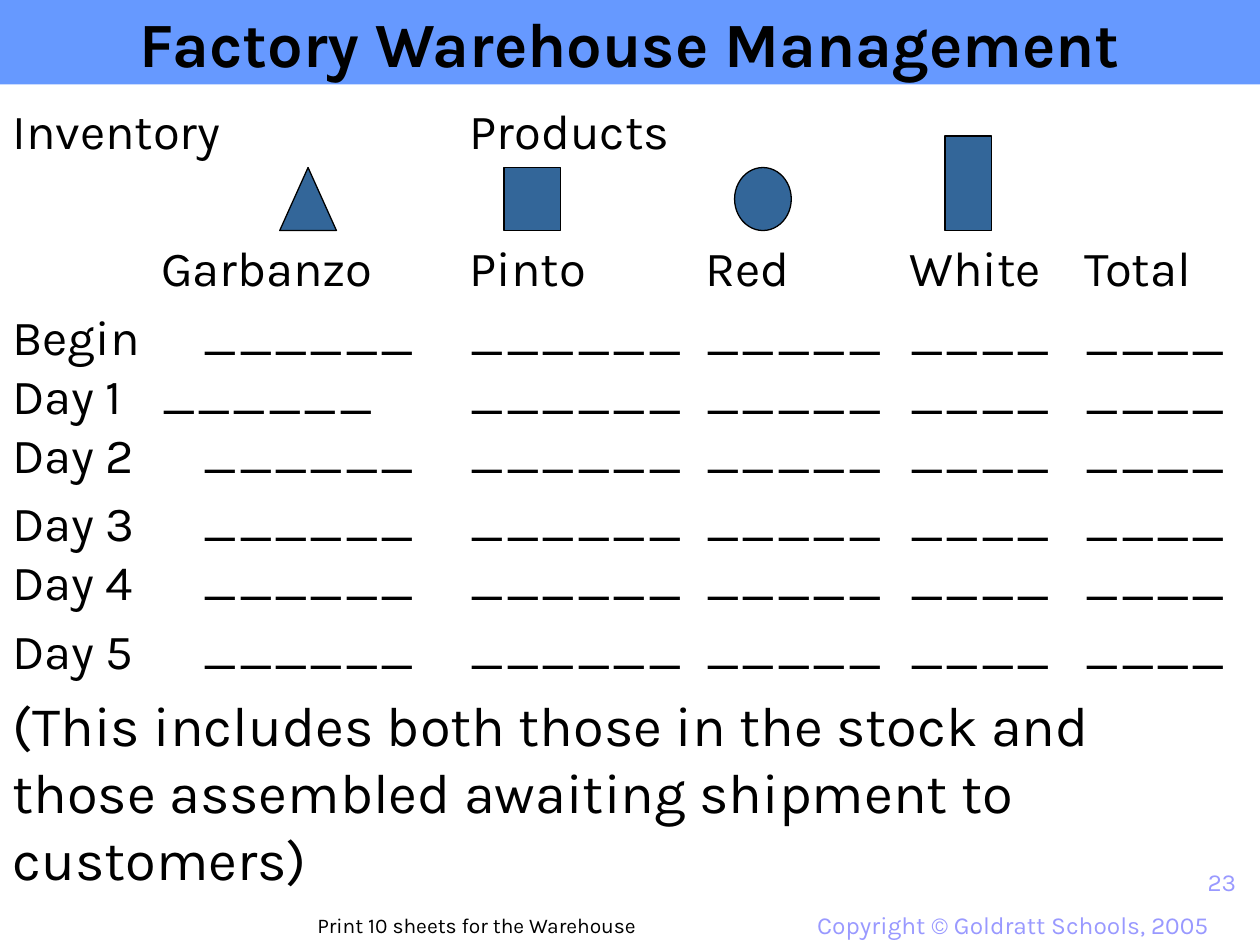
"""Build the Factory Warehouse Management inventory sheet slide."""
from lxml import etree
from pptx import Presentation
from pptx.dml.color import RGBColor
from pptx.enum.shapes import MSO_SHAPE
from pptx.enum.text import MSO_ANCHOR, MSO_AUTO_SIZE, PP_ALIGN
from pptx.oxml.ns import qn
from pptx.util import Inches, Pt

RECT, OVAL, TRIANGLE = MSO_SHAPE.RECTANGLE, MSO_SHAPE.OVAL, MSO_SHAPE.ISOSCELES_TRIANGLE
LEFT, CENTER, RIGHT = PP_ALIGN.LEFT, PP_ALIGN.CENTER, PP_ALIGN.RIGHT
FONT, BLACK, LILAC, BAND, STEEL = "Karla", "000000", "9999FF", "6699FF", "336699"

TITLE = "Factory Warehouse Management"
HEADS = ["Garbanzo", "Pinto", "Red", "White", "Total"]
BLANKS = ["_" * n for n in (6, 6, 5, 4, 4)]
COLUMNS = [3.63, 5.5, 7.12, 8.51]
NEAR, FAR = 1.18, 1.51
GAP = 5.6
DAYS = [
    ("Begin", FAR, GAP), ("Day 1", NEAR, 0), ("Day 2", FAR, 0),
    ("Day 3", FAR, GAP), ("Day 4", FAR, 0), ("Day 5", FAR, GAP),
]
NOTE = "(This includes both those in the stock and those assembled awaiting shipment to customers)"
LINES = [
    ("Inventory\tProducts", COLUMNS[:1], 0, 28),
    ("\t".join(["", *HEADS]), [NEAR, *COLUMNS], 44.8, 28),
    *[("\t".join([day, *BLANKS]), [first, *COLUMNS], before, 28) for day, first, before in DAYS],
    (NOTE, [], 6.4, 32),
]
PRODUCTS = [
    (RECT, 4, 1.33, 0.45, 0.5),
    (OVAL, 5.83, 1.33, 0.45, 0.5),
    (TRIANGLE, 2.22, 1.33, 0.45, 0.5),
    (RECT, 7.5, 1.08, 0.37, 0.75),
]
FOOTERS = [
    ("Copyright © Goldratt Schools, 2005", (6.08, 7.17, 3.92, 0.33), 14, LILAC, CENTER),
    ("23", (7.83, 6.83, 2.08, 0.5), 14, LILAC, RIGHT),
    ("Print 10 sheets for the Warehouse", (2.42, 7.19, 2.83, 0.3), 12, BLACK, LEFT),
]


def rgb(value):
    return RGBColor.from_string(value)


def write(p, text, size=28, color=BLACK, bold=False, align=LEFT, before=0, tabs=()):
    p.alignment = align
    p.space_before = Pt(before)
    if tabs:
        tab_list = etree.SubElement(p._p.get_or_add_pPr(), qn("a:tabLst"))
        for pos in tabs:
            etree.SubElement(tab_list, qn("a:tab"), pos=str(Inches(pos)), algn="l")
    r = p.add_run()
    r.text = text
    r.font.name, r.font.size, r.font.bold = FONT, Pt(size), bold
    r.font.color.rgb = rgb(color)


def add_box(s, *box):
    tf = s.shapes.add_textbox(*map(Inches, box)).text_frame
    tf.word_wrap = True
    return tf


def add_title(s):
    sp = s.shapes.title
    sp.left, sp.top, sp.width, sp.height = map(Inches, (0, 0, 10, 0.67))
    sp.fill.solid()
    sp.fill.fore_color.rgb = rgb(BAND)
    tf = sp.text_frame
    tf.auto_size = MSO_AUTO_SIZE.NONE
    tf.vertical_anchor = MSO_ANCHOR.MIDDLE
    write(tf.paragraphs[0], TITLE, size=36, bold=True, align=CENTER)


def add_product(s, kind, *box):
    sp = s.shapes.add_shape(kind, *map(Inches, box))
    sp.shadow.inherit = False
    sp.fill.solid()
    sp.fill.fore_color.rgb = rgb(STEEL)
    sp.line.color.rgb = rgb(BLACK)
    sp.line.width = Pt(0.75)


def main():
    prs = Presentation()
    prs.slide_width, prs.slide_height = Inches(10), Inches(7.5)
    s = prs.slides.add_slide(prs.slide_layouts[5])
    add_title(s)
    tf = add_box(s, 0, 0.75, 10, 5.92)
    for i, (text, tabs, before, size) in enumerate(LINES):
        p = tf.add_paragraph() if i else tf.paragraphs[0]
        write(p, text, size=size, before=before, tabs=tabs)
    for product in PRODUCTS:
        add_product(s, *product)
    for text, box, size, color, align in FOOTERS:
        write(add_box(s, *box).paragraphs[0], text, size=size, color=color, align=align)
    prs.save("out.pptx")


if __name__ == "__main__":
    main()
